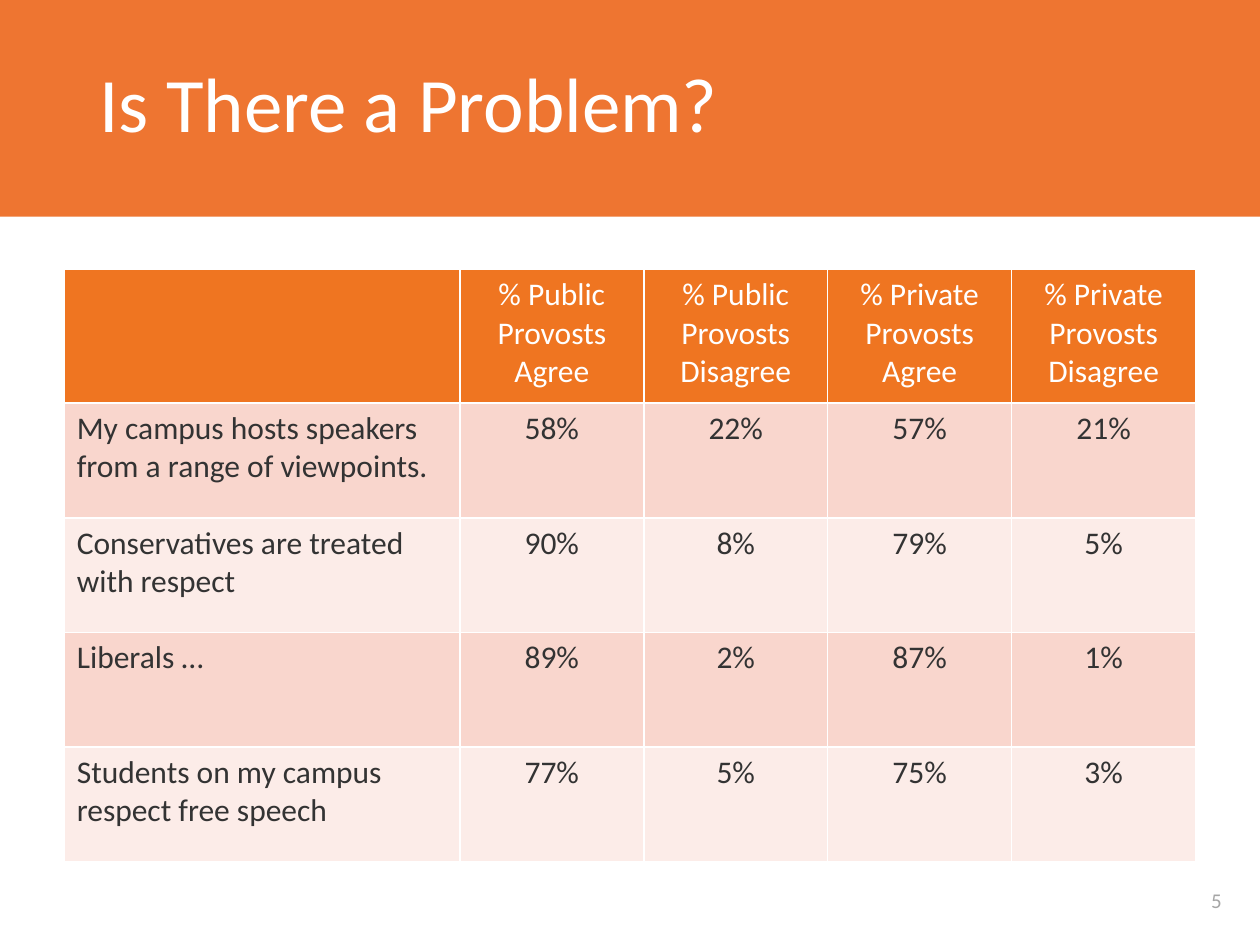
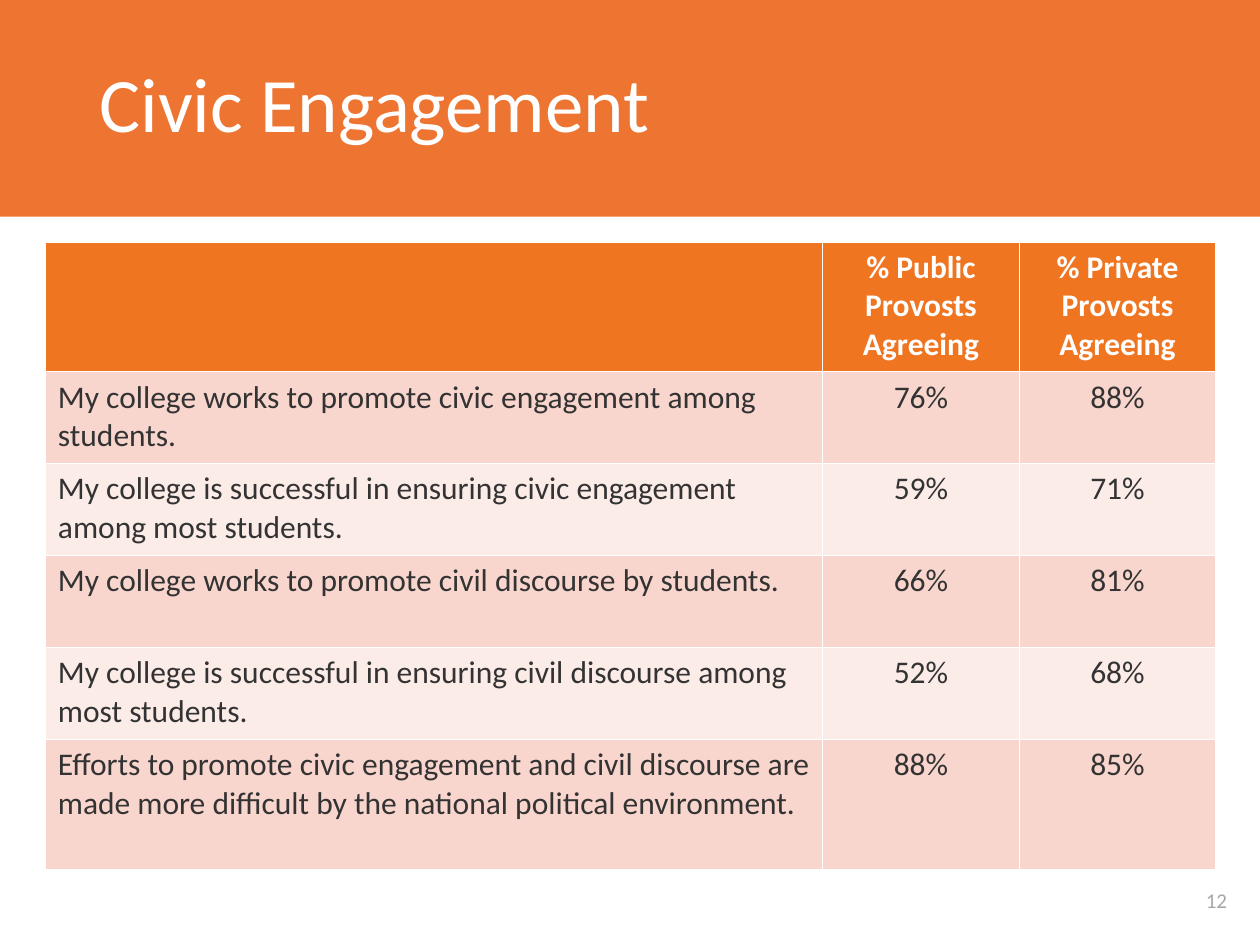
"""Build two survey slides, each with a title band, a table and a page number."""
from lxml import etree
from pptx import Presentation
from pptx.dml.color import RGBColor
from pptx.enum.shapes import MSO_SHAPE
from pptx.enum.text import MSO_ANCHOR, PP_ALIGN
from pptx.oxml.ns import qn
from pptx.util import Inches, Pt

RECTANGLE = MSO_SHAPE.RECTANGLE
MIDDLE = MSO_ANCHOR.MIDDLE
LEFT, CENTER = PP_ALIGN.LEFT, PP_ALIGN.CENTER

WHITE = RGBColor(0xFF, 0xFF, 0xFF)
BAND_ORANGE = RGBColor(0xEE, 0x75, 0x31)
HEADER_ORANGE = RGBColor(0xEF, 0x75, 0x21)
ROW_TINTS = (RGBColor(0xF9, 0xD6, 0xCD), RGBColor(0xFC, 0xEC, 0xE8))
BODY_GREY = RGBColor(0x33, 0x33, 0x33)
NUMBER_GREY = RGBColor(0xA6, 0xA6, 0xA6)
FONT = "Calibri"
BLANK_LAYOUT = 6

VIEWPOINT_ROWS = [
    ("", "% Public Provosts Agree", "% Public Provosts Disagree",
     "% Private Provosts Agree", "% Private Provosts Disagree"),
    ("My campus hosts speakers from a range of viewpoints.", "58%", "22%", "57%", "21%"),
    ("Conservatives are treated with respect", "90%", "8%", "79%", "5%"),
    ("Liberals …", "89%", "2%", "87%", "1%"),
    ("Students on my campus respect free speech", "77%", "5%", "75%", "3%"),
]
CIVIC_ROWS = [
    ("", "% Public Provosts Agreeing", "% Private Provosts Agreeing"),
    ("My college works to promote civic engagement among students.", "76%", "88%"),
    ("My college is successful in ensuring civic engagement among most students.",
     "59%", "71%"),
    ("My college works to promote civil discourse by students.", "66%", "81%"),
    ("My college is successful in ensuring civil discourse among most students.",
     "52%", "68%"),
    ("Efforts to promote civic engagement and civil discourse are made more difficult "
     "by the national political environment.", "88%", "85%"),
]


def write_text(frame, text, size=18, color=BODY_GREY, bold=False, align=LEFT, spacing=1.0):
    """Put one formatted paragraph into a text frame."""
    frame.word_wrap = True
    para = frame.paragraphs[0]
    para.alignment = align
    para.line_spacing = spacing
    span = para.add_run()
    span.text = text
    span.font.name = FONT
    span.font.size = Pt(size)
    span.font.bold = bold
    span.font.color.rgb = color


def add_text_box(page, left, top, width, height, text, **text_format):
    """Add a vertically centred text box."""
    box = page.shapes.add_textbox(Inches(left), Inches(top), Inches(width), Inches(height))
    box.text_frame.vertical_anchor = MIDDLE
    write_text(box.text_frame, text, **text_format)


def add_band(page):
    """Add the orange band behind the title."""
    band = page.shapes.add_shape(RECTANGLE, Inches(-0.01), 0, Inches(10.02), Inches(1.72))
    band.shadow.inherit = False
    band.fill.solid()
    band.fill.fore_color.rgb = BAND_ORANGE
    band.line.fill.background()


def add_page(deck, title, number):
    """Add a slide with its band, title and page number."""
    page = deck.slides.add_slide(deck.slide_layouts[BLANK_LAYOUT])
    add_band(page)
    add_text_box(page, 9.31, 6.95, 0.69, 0.39, str(number),
                 size=12, color=NUMBER_GREY, align=CENTER)
    add_text_box(page, 0.69, 0, 8.62, 1.71, title, size=44, color=WHITE, spacing=0.9)
    return page


def style_cell(cell, color):
    """Give a cell thin white borders and a solid fill."""
    properties = cell._tc.get_or_add_tcPr()
    for side in ("a:lnL", "a:lnR", "a:lnT", "a:lnB"):
        line = etree.SubElement(properties, qn(side), w=str(Pt(1)))
        fill = etree.SubElement(line, qn("a:solidFill"))
        etree.SubElement(fill, qn("a:srgbClr"), val=str(WHITE))
    cell.fill.solid()
    cell.fill.fore_color.rgb = color


def add_survey_table(page, left, top, widths, heights, rows, bold_header=False):
    """Add a table with an orange header and alternating row tints."""
    table = page.shapes.add_table(
        len(rows), len(widths), Inches(left), Inches(top),
        Inches(sum(widths)), Inches(sum(heights))).table
    for column, width in zip(table.columns, widths):
        column.width = Inches(width)
    for row_index, (row, height, texts) in enumerate(zip(table.rows, heights, rows)):
        row.height = Inches(height)
        header = row_index == 0
        for column_index, (cell, text) in enumerate(zip(row.cells, texts)):
            style_cell(cell, HEADER_ORANGE if header else ROW_TINTS[(row_index - 1) % 2])
            if text:
                write_text(cell.text_frame, text, bold=header and bold_header,
                           color=WHITE if header else BODY_GREY,
                           align=CENTER if column_index else LEFT)


def main():
    """Build and save the deck."""
    deck = Presentation()
    deck.slide_width, deck.slide_height = Inches(10), Inches(7.5)

    problem = add_page(deck, "Is There a Problem?", 5)
    add_survey_table(problem, 0.51, 2.14, [3.14] + [1.46] * 4, [1.06] + [0.91] * 4,
                     VIEWPOINT_ROWS)

    civic = add_page(deck, "Civic Engagement", 12)
    add_survey_table(civic, 0.36, 1.92, [6.17] + [1.56] * 2, [1.03] + [0.73] * 4 + [1.03],
                     CIVIC_ROWS, bold_header=True)

    deck.save("out.pptx")


if __name__ == "__main__":
    main()
